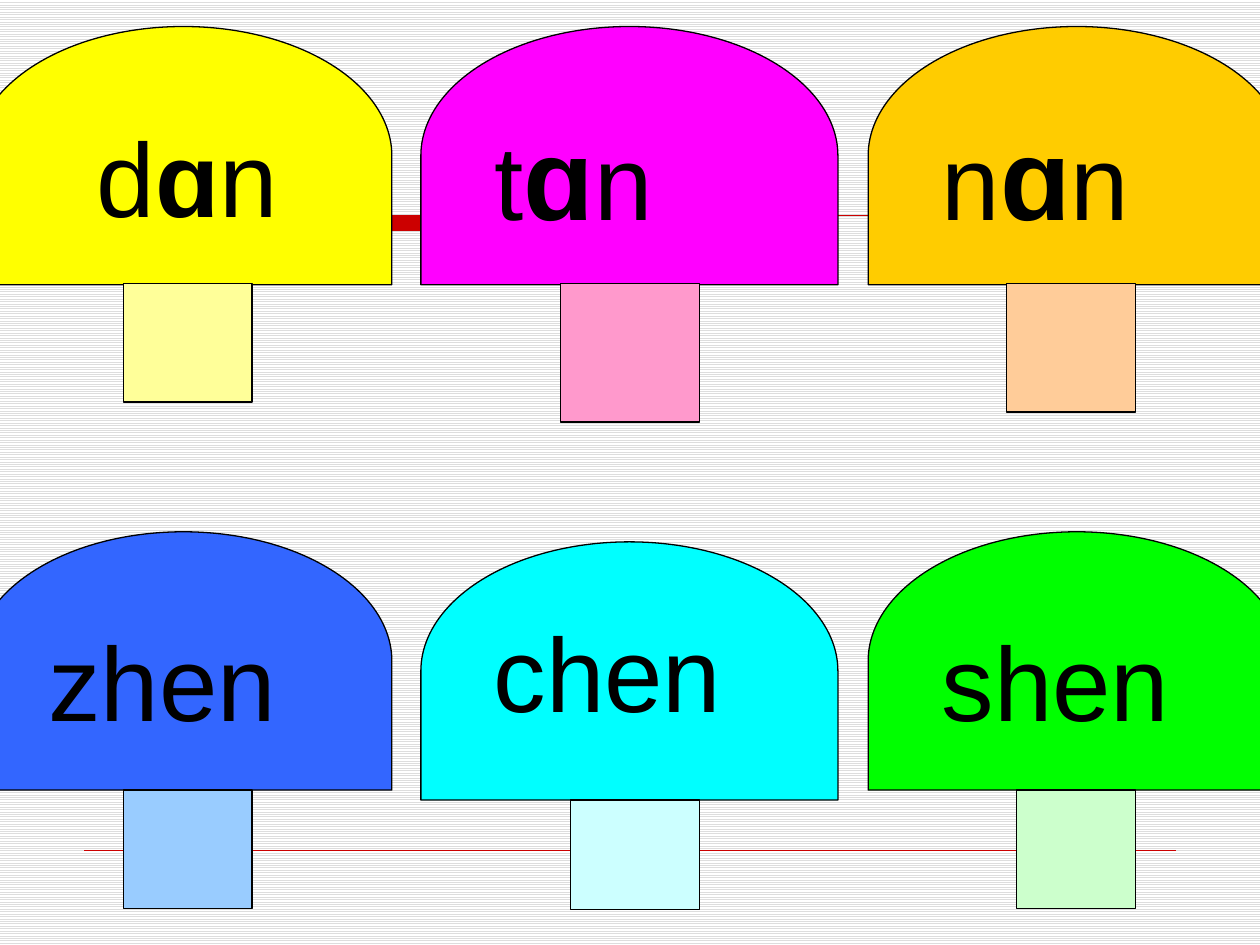
"""Build a slide of six coloured mushrooms carrying pinyin syllables."""
from lxml import etree
from pptx import Presentation
from pptx.dml.color import RGBColor
from pptx.enum.dml import MSO_PATTERN
from pptx.enum.shapes import MSO_CONNECTOR, MSO_SHAPE
from pptx.enum.text import MSO_ANCHOR, MSO_AUTO_SIZE, PP_ALIGN
from pptx.oxml.ns import qn
from pptx.util import Inches, Pt

BLACK = RGBColor(0x00, 0x00, 0x00)
WHITE = RGBColor(0xFF, 0xFF, 0xFF)
GREY = RGBColor(0xDD, 0xDD, 0xDD)
RED = RGBColor(0xCC, 0x00, 0x00)
YELLOW = RGBColor(0xFF, 0xFF, 0x00)
PALE_YELLOW = RGBColor(0xFF, 0xFF, 0x99)
MAGENTA = RGBColor(0xFF, 0x00, 0xFF)
PINK = RGBColor(0xFF, 0x99, 0xCC)
ORANGE = RGBColor(0xFF, 0xCC, 0x00)
PEACH = RGBColor(0xFF, 0xCC, 0x99)
BLUE = RGBColor(0x33, 0x66, 0xFF)
PALE_BLUE = RGBColor(0x99, 0xCC, 0xFF)
CYAN = RGBColor(0x00, 0xFF, 0xFF)
PALE_CYAN = RGBColor(0xCC, 0xFF, 0xFF)
GREEN = RGBColor(0x00, 0xFF, 0x00)
PALE_GREEN = RGBColor(0xCC, 0xFF, 0xCC)

CAP_W, CAP_H = 2.05, 3.31
CAP_LEFTS = (0.43, 3.97, 7.52)


def paint(sp, fill, line):
    sp.shadow.inherit = False
    sp.fill.solid()
    sp.fill.fore_color.rgb = fill
    sp.line.color.rgb = line
    sp.line.width = Pt(0.75)


def write(tf, syllable, alpha_size, space):
    p = tf.paragraphs[0]
    if space:
        p.space_before = Pt(30)
    head, alpha, tail = syllable.partition("ɑ")
    for text in filter(None, (head, alpha, tail)):
        r = p.add_run()
        r.text = text
        r.font.name = "Arial"
        r.font.size = Pt(alpha_size if text == "ɑ" else 60)
        r.font.bold = text == "ɑ"
        r.font.color.rgb = BLACK
    return p


prs = Presentation()
prs.slide_width, prs.slide_height = Inches(10), Inches(7.5)
s = prs.slides.add_slide(prs.slide_layouts[6])

bg = s.background.fill
bg.patterned()
bg.pattern = MSO_PATTERN.LIGHT_HORIZONTAL
bg.fore_color.rgb = GREY
bg.back_color.rgb = WHITE

fb = s.shapes.build_freeform(Inches(0.67), Inches(1.71))
fb.add_line_segments([(Inches(x), Inches(y)) for x, y in
                      ((5.76, 1.71), (5.76, 1.83), (0.67, 1.83))])
fb.move_to(Inches(0.67), Inches(1.71))
fb.add_line_segments([(Inches(9.37), Inches(1.71))], close=False)
paint(fb.convert_to_shape(), RED, RED)

rule = s.shapes.add_connector(MSO_CONNECTOR.STRAIGHT, Inches(0.67), Inches(6.75),
                              Inches(9.33), Inches(6.75))
rule.line.color.rgb = RED
rule.line.width = Pt(0.25)
etree.SubElement(rule._element.spPr, qn("a:effectLst"))

mushrooms = [
    (0, -0.42, YELLOW, "", PALE_YELLOW, (0.98, 2.25, 1.02, 0.94)),
    (1, -0.42, MAGENTA, "tɑn", PINK, (4.45, 2.25, 1.1, 1.1)),
    (2, -0.42, ORANGE, "nɑn", PEACH, (7.99, 2.25, 1.02, 1.02)),
    (0, 3.59, BLUE, "zhen", PALE_BLUE, (0.98, 6.27, 1.02, 0.94)),
    (1, 3.67, CYAN, "", PALE_CYAN, (4.53, 6.35, 1.02, 0.87)),
    (2, 3.59, GREEN, "shen", PALE_GREEN, (8.07, 6.27, 0.94, 0.94)),
]
for col, top, color, syllable, stem_color, stem_box in mushrooms:
    cap = s.shapes.add_shape(MSO_SHAPE.FLOWCHART_DELAY, Inches(CAP_LEFTS[col]),
                             Inches(top), Inches(CAP_W), Inches(CAP_H))
    cap.rotation = 270
    paint(cap, color, BLACK)
    if syllable:
        tf = cap.text_frame
        tf.word_wrap = False
        tf.vertical_anchor = MSO_ANCHOR.MIDDLE
        tf._txBody.bodyPr.set("vert", "eaVert")
        write(tf, syllable, 66, syllable == "tɑn").alignment = PP_ALIGN.CENTER
    stem = s.shapes.add_shape(MSO_SHAPE.RECTANGLE, *map(Inches, stem_box))
    paint(stem, stem_color, BLACK)

for syllable, box in (("dɑn", (0.67, 0.84, 1.81, 1.1)), ("chen", (3.82, 4.77, 2.36, 1.1))):
    tf = s.shapes.add_textbox(*map(Inches, box)).text_frame
    tf.word_wrap = True
    tf.auto_size = MSO_AUTO_SIZE.SHAPE_TO_FIT_TEXT
    write(tf, syllable, 60, True)

prs.save("out.pptx")
